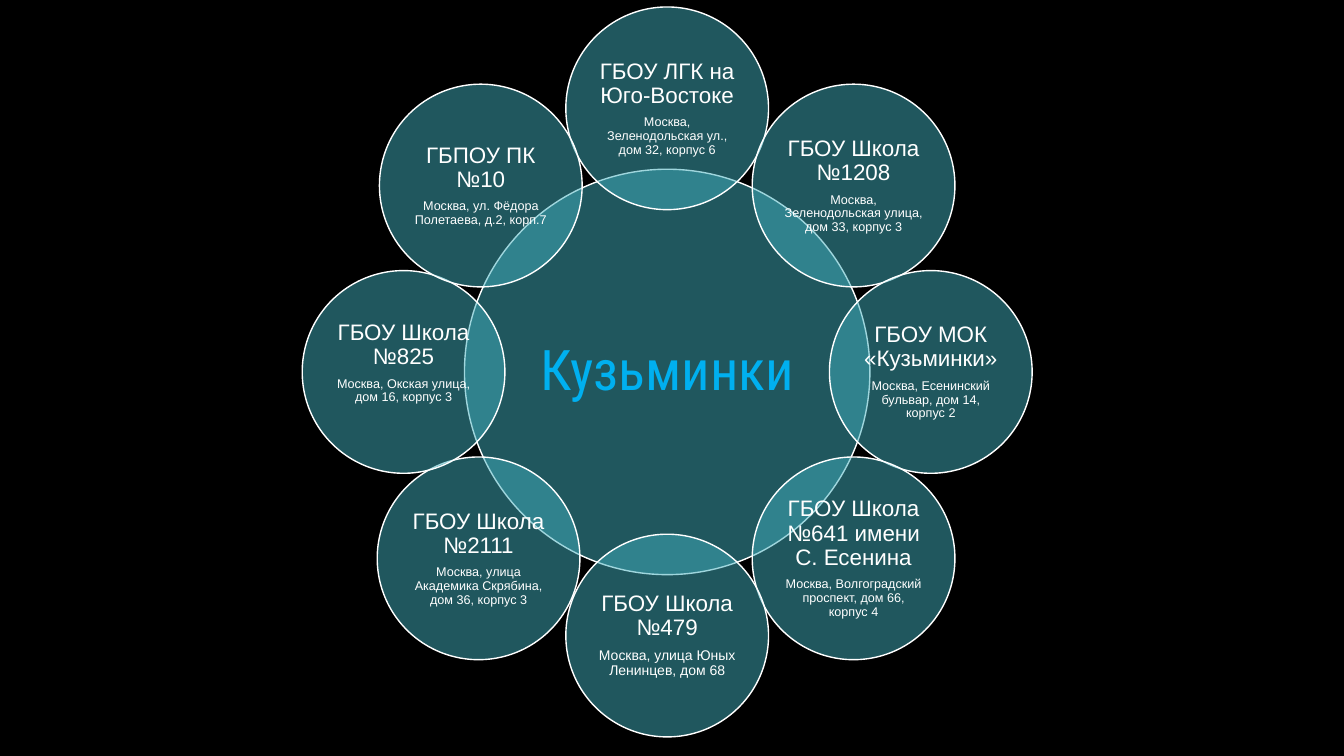
import math

from lxml import etree
from pptx import Presentation
from pptx.dml.color import RGBColor
from pptx.enum import shapes, text
from pptx.oxml.ns import qn
from pptx.util import Pt

BLACK = RGBColor(0x00, 0x00, 0x00)
WHITE = RGBColor(0xFF, 0xFF, 0xFF)
TEAL = RGBColor(0x41, 0xAE, 0xBD)
SKY = RGBColor(0x00, 0xB0, 0xF0)

CENTER_X, CENTER_Y = 476.6, 265.7
HUB_SIZE, SCHOOL_SIZE = 289.6, 144.8
RING_RADIUS = 188.3

# Clockwise from the top: name, address, format values that differ
SCHOOLS = [
    ("ГБОУ ЛГК на Юго-Востоке", "Москва, Зеленодольская ул., дом 32, корпус 6", {}),
    ("ГБОУ Школа №1208", "Москва, Зеленодольская улица, дом 33, корпус 3", {}),
    ("ГБОУ МОК «Кузьминки»", "Москва, Есенинский бульвар, дом 14, корпус 2", {}),
    ("ГБОУ Школа №641 имени С. Есенина",
     "Москва, Волгоградский проспект, дом 66, корпус 4", {}),
    ("ГБОУ Школа №479", "Москва, улица Юных Ленинцев, дом 68", {"address_size": 10}),
    ("ГБОУ Школа №2111", "Москва, улица Академика Скрябина, дом 36, корпус 3",
     {"shift": -1.6}),
    ("ГБОУ Школа №825", "Москва, Окская улица, дом 16, корпус 3", {"lift": 13}),
    ("ГБПОУ ПК №10", "Москва, ул. Фёдора Полетаева, д.2, корп.7", {}),
]


def set_attributes(target, values):
    for name, value in values.items():
        setattr(target, name, value)


def add_circle(slide, x, y, size, inset, lift=0):
    """Add a half-transparent circle centred on x, y; lift is extra bottom inset."""
    circle = slide.shapes.add_shape(
        shapes.MSO_SHAPE.OVAL, Pt(x - size / 2), Pt(y - size / 2), Pt(size), Pt(size))
    circle.shadow.inherit = False
    circle.fill.solid()
    circle.fill.fore_color.rgb = TEAL
    color = circle.fill._xPr.find(qn("a:solidFill"))[0]
    etree.SubElement(color, qn("a:alpha"), val="50000")
    circle.line.color.rgb = WHITE
    circle.line.width = Pt(1)
    set_attributes(circle.text_frame, {
        "word_wrap": True,
        "vertical_anchor": text.MSO_ANCHOR.MIDDLE,
        "margin_left": Pt(inset),
        "margin_right": Pt(inset),
        "margin_top": Pt(inset),
        "margin_bottom": Pt(inset + lift),
    })
    return circle.text_frame


def write(paragraph, words, size, font="Arial", color=WHITE):
    set_attributes(paragraph, {
        "alignment": text.PP_ALIGN.CENTER,
        "line_spacing": 0.9,
        "space_after": Pt(size * 0.35),
    })
    run = paragraph.add_run()
    run.text = words
    set_attributes(run.font, {"name": font, "size": Pt(size)})
    run.font.color.rgb = color


def add_hub(slide):
    hub = add_circle(slide, CENTER_X, CENTER_Y, HUB_SIZE, 4)
    write(hub.paragraphs[0], "Кузьминки", 40, "Roboto Condensed", SKY)


def add_school(slide, angle, name, address, address_size=9, shift=0, lift=0):
    x = CENTER_X + RING_RADIUS * math.sin(angle) + shift
    y = CENTER_Y - RING_RADIUS * math.cos(angle)
    school = add_circle(slide, x, y, SCHOOL_SIZE, 1.6, lift)
    write(school.paragraphs[0], name, 16)
    write(school.add_paragraph(), address, address_size)


def main():
    deck = Presentation()
    deck.slide_width, deck.slide_height = Pt(960), Pt(540)
    slide = deck.slides.add_slide(deck.slide_layouts[6])
    slide.background.fill.solid()
    slide.background.fill.fore_color.rgb = BLACK

    add_hub(slide)
    for place, (name, address, values) in enumerate(SCHOOLS):
        add_school(slide, math.tau * place / len(SCHOOLS), name, address, **values)

    deck.save("out.pptx")


if __name__ == "__main__":
    main()
